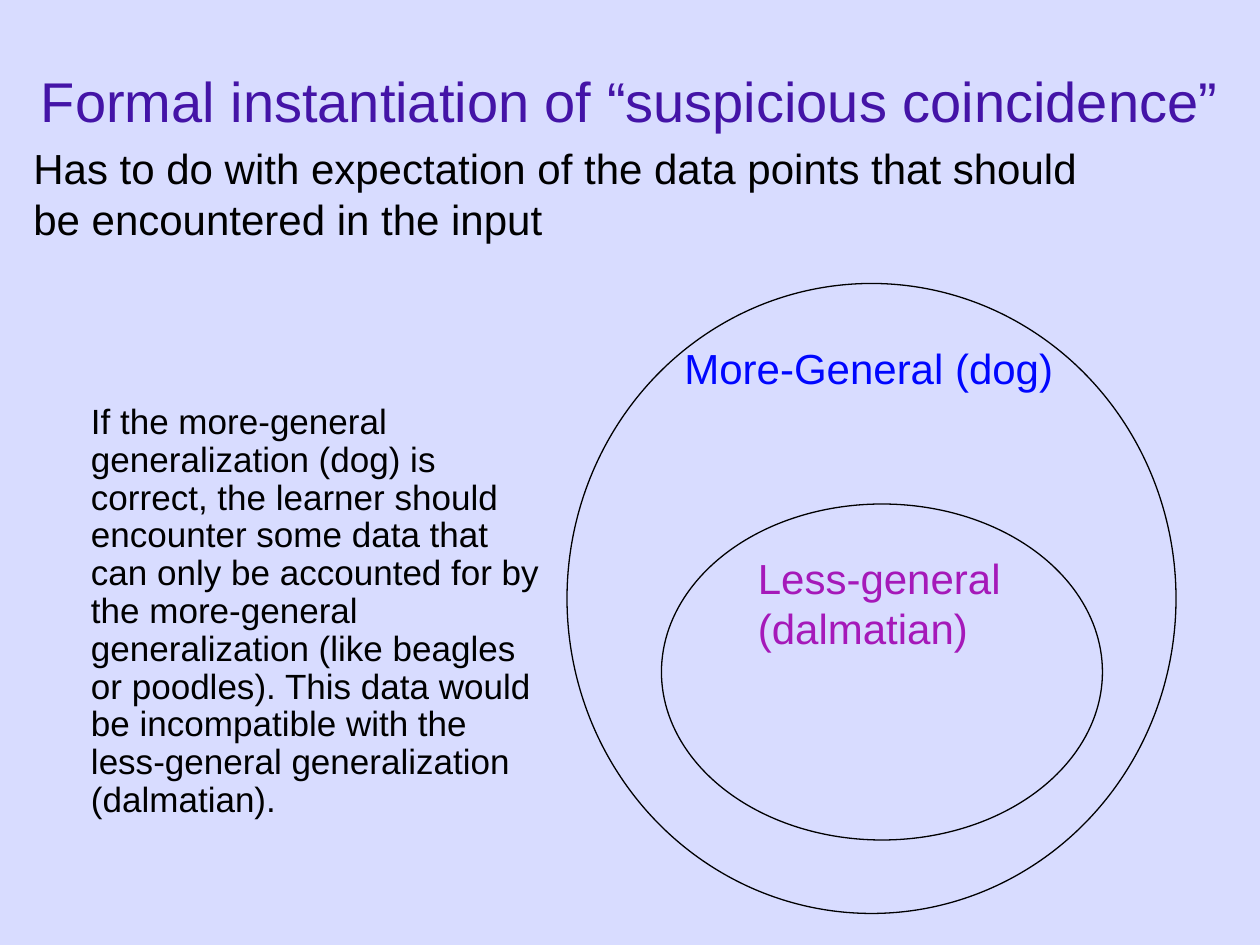
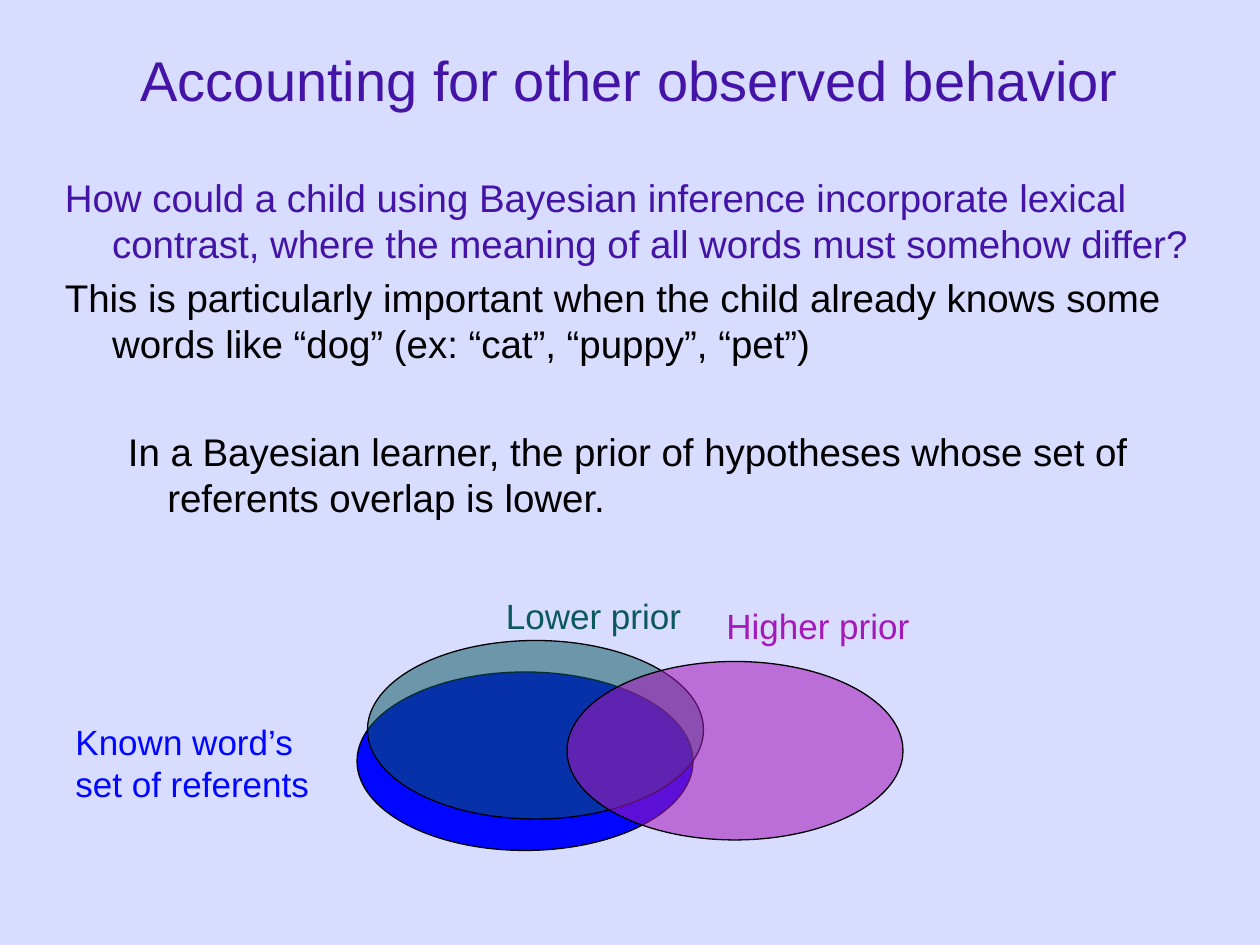
import pptx
import pptx.util
import pptx.dml.color
import pptx.enum.shapes
import pptx.enum.text
import lxml.etree
from pptx.oxml.ns import qn

Pt = pptx.util.Pt
RGB = pptx.dml.color.RGBColor.from_string
AUTO_SIZE = pptx.enum.text.MSO_AUTO_SIZE

FONT = "Arial"
COLORS = {
    "background": "D8DCFF",
    "title": "4414A7",
    "text": "000000",
    "blue": "0006FF",
    "purple": "A519B9",
    "teal": "0D585D",
}


def write(shape, paragraphs, size, wrap=True, fit=True):
    frame = shape.text_frame
    frame.text = "\n".join(text for text, color in paragraphs)
    frame.word_wrap = wrap
    frame.auto_size = AUTO_SIZE.SHAPE_TO_FIT_TEXT if fit else AUTO_SIZE.NONE
    for paragraph, (text, color) in zip(frame.paragraphs, paragraphs):
        font = paragraph.runs[0].font
        font.name = FONT
        font.size = Pt(size)
        font.color.rgb = RGB(COLORS[color])
    return frame


def add_set(slide, box, color=None, opacity=100):
    ellipse = slide.shapes.add_shape(pptx.enum.shapes.MSO_SHAPE.OVAL, *map(Pt, box))
    ellipse.shadow.inherit = False
    ellipse.line.color.rgb = RGB(COLORS["text"])
    ellipse.line.width = Pt(0.75)
    if color is None:
        ellipse.fill.background()
        return
    ellipse.fill.solid()
    ellipse.fill.fore_color.rgb = RGB(COLORS[color])
    if opacity < 100:
        fill_color = ellipse._element.spPr.find(qn("a:solidFill")).find(qn("a:srgbClr"))
        alpha = lxml.etree.SubElement(fill_color, qn("a:alpha"))
        alpha.set("val", str(opacity * 1000))


prs = pptx.Presentation()
prs.slide_width = Pt(720)
prs.slide_height = Pt(540)
master_fill = prs.slide_master.background.fill
master_fill.solid()
master_fill.fore_color.rgb = RGB(COLORS["background"])

slides = []
for heading, box in [
    ("Formal instantiation of “suspicious coincidence”", (0, 12, 720, 90)),
    ("Accounting for other observed behavior", (54, 0, 612, 90)),
]:
    slide = prs.slides.add_slide(prs.slide_layouts[5])
    title = slide.shapes.title
    title.left, title.top, title.width, title.height = map(Pt, box)
    frame = write(title, [(heading, "title")], 32, fit=False)
    frame.vertical_anchor = pptx.enum.text.MSO_ANCHOR.MIDDLE
    frame.paragraphs[0].alignment = pptx.enum.text.PP_ALIGN.CENTER
    slides.append(slide)
coincidence, behavior = slides

expectation = coincidence.shapes.add_textbox(Pt(12), Pt(78), Pt(642), Pt(65))
write(expectation, [(
    "Has to do with expectation of the data points that should "
    "be encountered in the input", "text")], 24)

reasoning = coincidence.shapes.add_textbox(Pt(18), Pt(198), Pt(300), Pt(270))
frame = write(reasoning, [(
    "If the more-general generalization (dog) is correct, the learner should "
    "encounter some data that can only be accounted for by the more-general "
    "generalization (like beagles or poodles). This data would be incompatible "
    "with the less-general generalization (dalmatian).", "text")], 20, fit=False)
frame.margin_left = Pt(34)
frame.margin_top = Pt(33)
frame.paragraphs[0].line_spacing = 0.9

add_set(coincidence, (324, 162, 348, 360))
add_set(coincidence, (378, 288, 252, 192))

questions = behavior.shapes.add_textbox(Pt(30), Pt(96), Pt(660), Pt(294))
frame = write(questions, [
    ("How could a child using Bayesian inference incorporate lexical contrast, "
     "where the meaning of all words must somehow differ?", "title"),
    ("This is particularly important when the child already knows some words "
     "like “dog” (ex: “cat”, “puppy”, “pet”)", "text"),
    ("In a Bayesian learner, the prior of hypotheses whose set of referents "
     "overlap is lower.", "text"),
], 22, fit=False)
for paragraph, (margin, indent, before) in zip(
    frame.paragraphs, [(27, -27, 0), (27, -27, 4.4), (58.5, -22.5, 35)]
):
    paragraph.space_before = Pt(before)
    properties = paragraph._p.get_or_add_pPr()
    properties.set("marL", str(Pt(margin)))
    properties.set("indent", str(Pt(indent)))

for left, top, color, opacity in [
    (204, 384, "blue", 100),
    (210, 366, "teal", 53),
    (324, 378, "purple", 56),
]:
    add_set(behavior, (left, top, 192, 102), color, opacity)

for slide, label, color, size, box, wrap in [
    (coincidence, "More-General (dog)", "blue", 24, (384, 192, 225, 36), False),
    (coincidence, "Less-general (dalmatian)", "purple", 24, (426, 312, 175, 65), True),
    (behavior, "Higher prior", "purple", 20, (408, 342, 119, 31), False),
    (behavior, "Known word’s set of referents", "blue", 20, (36, 408, 162, 55), True),
    (behavior, "Lower prior", "teal", 20, (282, 336, 114.5, 31), False),
]:
    set_label = slide.shapes.add_textbox(*map(Pt, box))
    write(set_label, [(label, color)], size, wrap)

prs.save("out.pptx")
